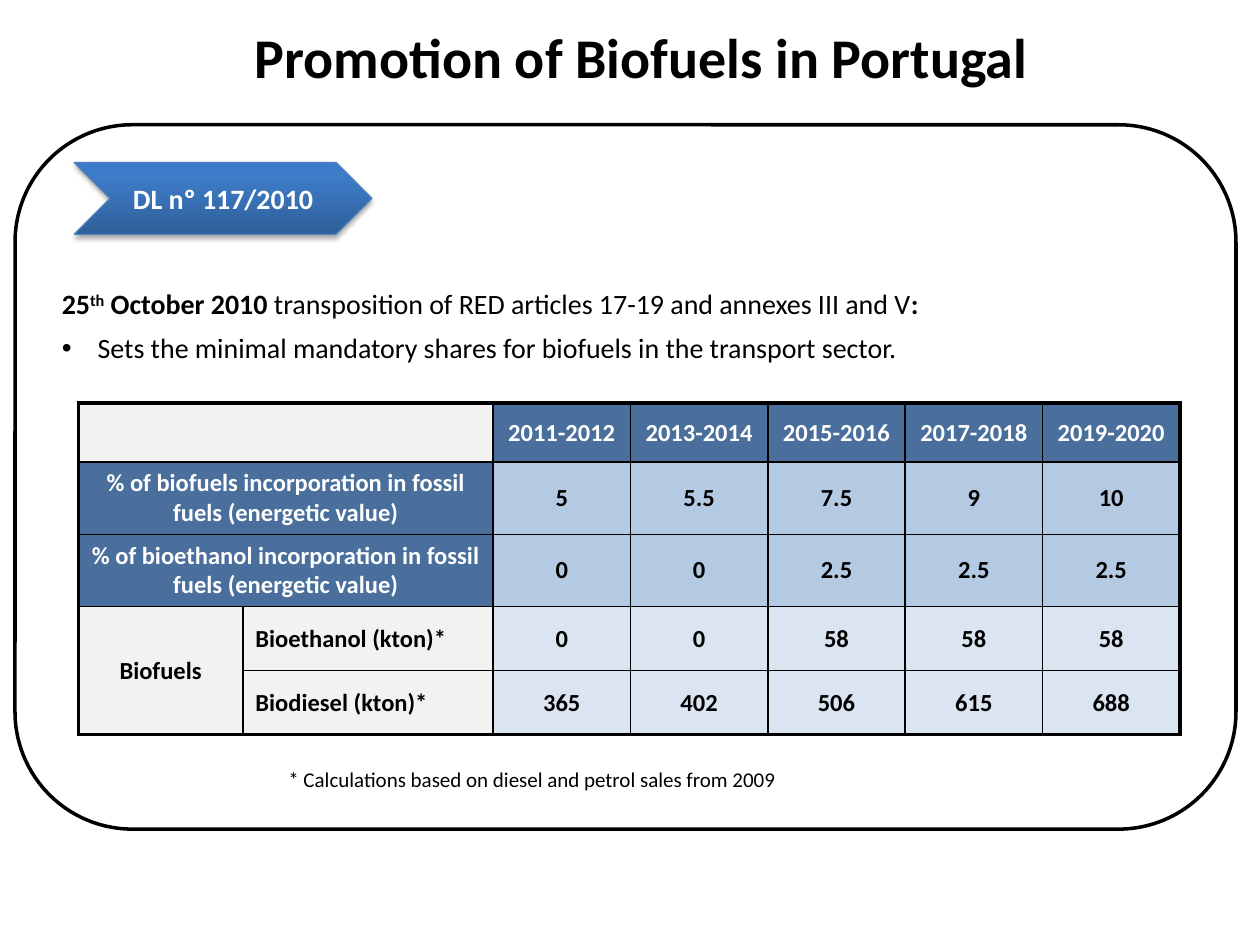
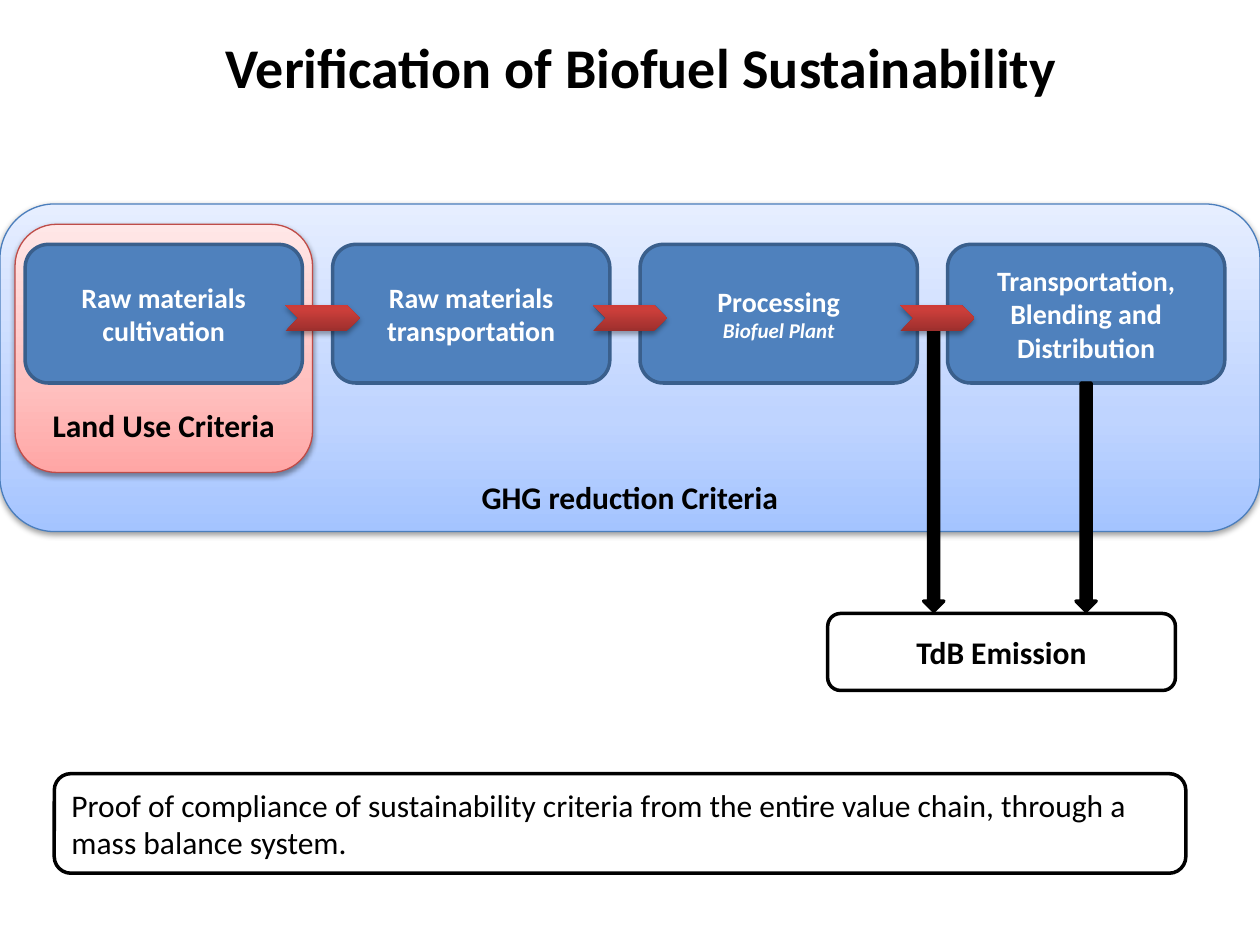
import dataclasses

import lxml.etree
import pptx
import pptx.dml.color
import pptx.enum.shapes
import pptx.enum.text
import pptx.oxml.ns
import pptx.util

Pt = pptx.util.Pt
qn = pptx.oxml.ns.qn
Kind = pptx.enum.shapes.MSO_SHAPE
Align = pptx.enum.text.PP_ALIGN
Anchor = pptx.enum.text.MSO_ANCHOR


@dataclasses.dataclass(frozen=True)
class Theme:
    font: str = "Calibri"
    title_size: int = 32
    label_size: int = 18
    body_size: int = 16
    table_size: int = 14
    note_size: int = 12
    black: str = "000000"
    white: str = "FFFFFF"
    stage_fill: str = "4F81BD"
    stage_line: str = "3A5F8C"
    blue_line: str = "4B7EBC"
    red_line: str = "BF4C48"
    # Gradients run from bottom to top: (position in percent, colour)
    deep_blue: tuple = ((0, "2F5F99"), (80, "3D7CC7"), (100, "3A7CCB"))
    deep_red: tuple = ((0, "9C2F2D"), (80, "CB3E3A"), (100, "CE3B37"))
    pale_blue: tuple = ((0, "A4C4FF"), (35, "BFD4FF"), (100, "E6EEFF"))
    pale_red: tuple = ((0, "FFA6A5"), (35, "FFC0BF"), (100, "FFE7E7"))
    # Table fills: (colour, opacity in percent)
    header_cell: tuple = ("376092", 90)
    share_cell: tuple = ("95B3D7", 70)
    amount_cell: tuple = ("B9CDE5", 50)
    plain_cell: tuple = ("F2F2F2", 100)
    # Shadows: (opacity in percent, distance)
    strong_shadow: tuple = (35, 1.8)
    panel_shadow: tuple = (38, 1.6)


THEME = Theme()


def rgb(colour):
    return pptx.dml.color.RGBColor.from_string(colour)


def points(values):
    return [Pt(value) for value in values]


def add_colour(parent, colour, opacity=100):
    element = lxml.etree.SubElement(parent, qn("a:srgbClr"), val=colour)
    if opacity < 100:
        lxml.etree.SubElement(element, qn("a:alpha"), val=str(opacity * 1000))


class Deck:
    def __init__(self, theme):
        self.theme = theme
        self.presentation = pptx.Presentation()
        self.presentation.slide_width = Pt(720)
        self.presentation.slide_height = Pt(540)
        self.page = None

    def add_page(self, title, top):
        title_only = self.presentation.slide_layouts[5]
        self.page = self.presentation.slides.add_slide(title_only)
        box = self.page.shapes.title
        box.left, box.top, box.width, box.height = points((36, top, 661, 57))
        box.text_frame.vertical_anchor = Anchor.BOTTOM
        self.set_text(box.text_frame, [[(title, {"bold": True})]],
                      size=self.theme.title_size)

    def set_text(self, frame, paragraphs, align=Align.CENTER, **base):
        """Fill a frame; a paragraph is a list of (text, format) spans."""
        for index, spans in enumerate(paragraphs):
            para = frame.paragraphs[0] if index == 0 else frame.add_paragraph()
            para.alignment = align
            for text, changes in spans:
                span = para.add_run()
                span.text = text
                self.format_span(span, {**base, **changes})

    def format_span(self, span, changes):
        values = {"name": self.theme.font, "color": self.theme.black, **changes}
        for name, value in values.items():
            if name == "color":
                span.font.color.rgb = rgb(value)
            elif name == "size":
                span.font.size = Pt(value)
            elif name == "baseline":
                span.font._element.set("baseline", str(value * 1000))
            else:
                setattr(span.font, name, value)

    def add_shape(self, kind, at, fill, line=None, weight=2, shadow=None):
        """Add a preset shape; fill is one colour or a tuple of gradient stops."""
        box = self.page.shapes.add_shape(kind, *points(at))
        if isinstance(fill, tuple):
            self.fill_gradient(box, fill)
        else:
            box.fill.solid()
            box.fill.fore_color.rgb = rgb(fill)
        if line:
            box.line.color.rgb = rgb(line)
            box.line.width = Pt(weight)
        else:
            box.line.fill.background()
        box.shadow.inherit = False
        if shadow:
            opacity, distance = shadow
            effects = box._element.spPr.find(qn("a:effectLst"))
            outer = lxml.etree.SubElement(
                effects, qn("a:outerShdw"), blurRad=str(Pt(3.1)),
                dist=str(Pt(distance)), dir="5400000", rotWithShape="0")
            add_colour(outer, self.theme.black, opacity)
        box.text_frame.vertical_anchor = Anchor.MIDDLE
        return box

    def fill_gradient(self, box, stops):
        box.fill.gradient()
        box.fill.gradient_angle = 90
        stop_list = box._element.spPr.find(qn("a:gradFill")).find(qn("a:gsLst"))
        for old in list(stop_list):
            stop_list.remove(old)
        for position, colour in stops:
            stop = lxml.etree.SubElement(stop_list, qn("a:gs"),
                                         pos=str(position * 1000))
            add_colour(stop, colour)

    def add_outline(self, at):
        return self.add_shape(Kind.ROUNDED_RECTANGLE, at, self.theme.white,
                              self.theme.black)

    def add_panel(self, at, stops, line, label, bottom):
        """Add a shaded rounded panel with its label near the lower edge."""
        box = self.add_shape(Kind.ROUNDED_RECTANGLE, at, stops, line, 0.75,
                             self.theme.panel_shadow)
        box.text_frame.vertical_anchor = Anchor.BOTTOM
        box.text_frame.margin_bottom = Pt(bottom)
        self.set_text(box.text_frame, [[(label, {"bold": True})]],
                      size=self.theme.label_size)

    def add_note(self, at, text):
        box = self.page.shapes.add_textbox(*points(at))
        box.text_frame.word_wrap = False
        self.set_text(box.text_frame, [[(text, {})]], Align.LEFT,
                      size=self.theme.note_size)

    def add_bullet(self, para, indent):
        properties = para._p.get_or_add_pPr()
        properties.set("marL", str(Pt(indent)))
        properties.set("indent", str(Pt(-indent)))
        lxml.etree.SubElement(properties, qn("a:buFont"), typeface="Arial")
        lxml.etree.SubElement(properties, qn("a:buChar"), char="•")

    def add_table(self, at, widths, heights, rows, merges, cell_style):
        """Add a table; cell_style(row, column) gives fill, colour, alignment."""
        size = sum(widths), sum(heights)
        table = self.page.shapes.add_table(
            len(heights), len(widths), *points(at + size)).table
        table.first_row = table.horz_banding = False
        for column, width in zip(table.columns, widths):
            column.width = Pt(width)
        for row, height in zip(table.rows, heights):
            row.height = Pt(height)
        for first, last in merges:
            table.cell(*first).merge(table.cell(*last))
        for r, texts in enumerate(rows):
            for c, text in enumerate(texts):
                cell = table.cell(r, c)
                if cell.is_spanned:
                    continue
                right = c + (cell.span_width if cell.is_merge_origin else 1)
                bottom = r + (cell.span_height if cell.is_merge_origin else 1)
                self.add_borders(cell, {
                    "L": c == 0, "R": right == len(widths),
                    "T": r == 0, "B": bottom == len(heights)})
                (fill, opacity), colour, align = cell_style(r, c)
                cell.fill.solid()
                cell.fill.fore_color.rgb = rgb(fill)
                if opacity < 100:
                    solid = cell._tc.tcPr.find(qn("a:solidFill"))
                    solid.clear()
                    add_colour(solid, fill, opacity)
                cell.vertical_anchor = Anchor.MIDDLE
                if text:
                    self.set_text(cell.text_frame, [[(text, {})]], align,
                                  bold=True, size=self.theme.table_size,
                                  color=colour)

    def add_borders(self, cell, outer_sides):
        properties = cell._tc.get_or_add_tcPr()
        for side, is_outer in outer_sides.items():
            line = lxml.etree.SubElement(properties, qn("a:ln" + side),
                                         w=str(Pt(2.25 if is_outer else 1)))
            solid = lxml.etree.SubElement(line, qn("a:solidFill"))
            add_colour(solid, self.theme.black)


def target_cell_style(row, column):
    if column < 2 and row in (0, 3, 4):
        align = Align.LEFT if column == 1 else Align.CENTER
        return THEME.plain_cell, THEME.black, align
    if row == 0 or column < 2:
        return THEME.header_cell, THEME.white, Align.CENTER
    fill = THEME.share_cell if row < 3 else THEME.amount_cell
    return fill, THEME.black, Align.CENTER


def build_promotion(deck):
    deck.add_page("Promotion of Biofuels in Portugal", -2)
    frame = deck.add_outline((8.6, 71.3, 697.7, 402.5)).text_frame
    frame.vertical_anchor = Anchor.TOP
    frame.margin_top = Pt(73)
    bold = {"bold": True}
    deck.set_text(frame, [
        [("25", bold), ("th", {"bold": True, "baseline": 30}),
         (" October 2010 ", bold),
         ("transposition of RED articles 17-19 and annexes III and V", {}),
         (":", bold)],
        [("Sets the minimal mandatory shares for biofuels in the transport sector.",
          {})],
    ], Align.JUSTIFY, size=THEME.body_size)
    frame.paragraphs[0].space_after = Pt(6)
    deck.add_bullet(frame.paragraphs[1], 20.5)

    deck.add_table(
        (44.8, 230.4), [94, 143] + [78.5] * 5, [33.7, 41.3, 41.3, 36.6, 36.6],
        [
            ["", "", "2011-2012", "2013-2014", "2015-2016", "2017-2018", "2019-2020"],
            ["% of biofuels incorporation in fossil fuels (energetic value)", "",
             "5", "5.5", "7.5", "9", "10"],
            ["% of bioethanol incorporation in fossil fuels (energetic value)", "",
             "0", "0", "2.5", "2.5", "2.5"],
            ["Biofuels", "Bioethanol (kton)*", "0", "0", "58", "58", "58"],
            ["", "Biodiesel (kton)*", "365", "402", "506", "615", "688"],
        ],
        [((row, 0), (row, 1)) for row in range(3)] + [((3, 0), (4, 0))],
        target_cell_style)
    deck.add_note((157.7, 434.2, 302.4, 21.6),
                  "* Calculations based on diesel and petrol sales from 2009")
    law = deck.add_shape(Kind.CHEVRON, (42.5, 92.9, 170, 41), THEME.deep_blue,
                         THEME.blue_line, 0.75, THEME.strong_shadow)
    deck.set_text(law.text_frame, [[("DL nº 117/2010", bold)]],
                  size=THEME.body_size, color=THEME.white)


def build_verification(deck):
    deck.add_page("Verification of Biofuel Sustainability", 3.6)
    emission = deck.add_outline((473, 350.6, 198.7, 44))
    deck.set_text(emission.text_frame, [[("TdB Emission", {"bold": True})]],
                  size=THEME.label_size)
    deck.add_panel((0, 116.6, 720, 187.2), THEME.pale_blue, THEME.blue_line,
                   "GHG reduction Criteria", 0)
    deck.add_panel((8.6, 128.2, 170, 141.8), THEME.pale_red, THEME.red_line,
                   "Land Use Criteria", 9.3)

    stages = [
        [[("Raw materials cultivation", {})]],
        [[("Raw materials transportation", {})]],
        [[("Processing", {})],
         [("Biofuel Plant", {"size": THEME.note_size, "italic": True})]],
        [[("Transportation, Blending and Distribution", {})]],
    ]
    pitch = 175.7
    for index, paragraphs in enumerate(stages):
        stage = deck.add_shape(
            Kind.ROUNDED_RECTANGLE, (14.4 + index * pitch, 139.7, 158.4, 79.2),
            THEME.stage_fill, THEME.stage_line)
        deck.set_text(stage.text_frame, paragraphs, bold=True,
                      size=THEME.body_size, color=THEME.white)

    arrow_end = 349.2
    for left, top in ((527.8, 185), (614.9, 218.9)):
        deck.add_shape(Kind.DOWN_ARROW, (left, top, 11.5, arrow_end - top),
                       THEME.black, THEME.black)
    for index in range(len(stages) - 1):
        deck.add_shape(Kind.CHEVRON, (163 + index * pitch, 174.2, 42.5, 15.1),
                       THEME.deep_red, shadow=THEME.strong_shadow)

    proof = deck.add_outline((31, 442.1, 646.6, 56.9))
    deck.set_text(proof.text_frame, [[(
        "Proof of compliance of sustainability criteria from the entire value "
        "chain, through a mass balance system.", {})]],
        Align.LEFT, size=THEME.label_size)


def main():
    deck = Deck(THEME)
    build_promotion(deck)
    build_verification(deck)
    deck.presentation.save("out.pptx")


if __name__ == "__main__":
    main()
